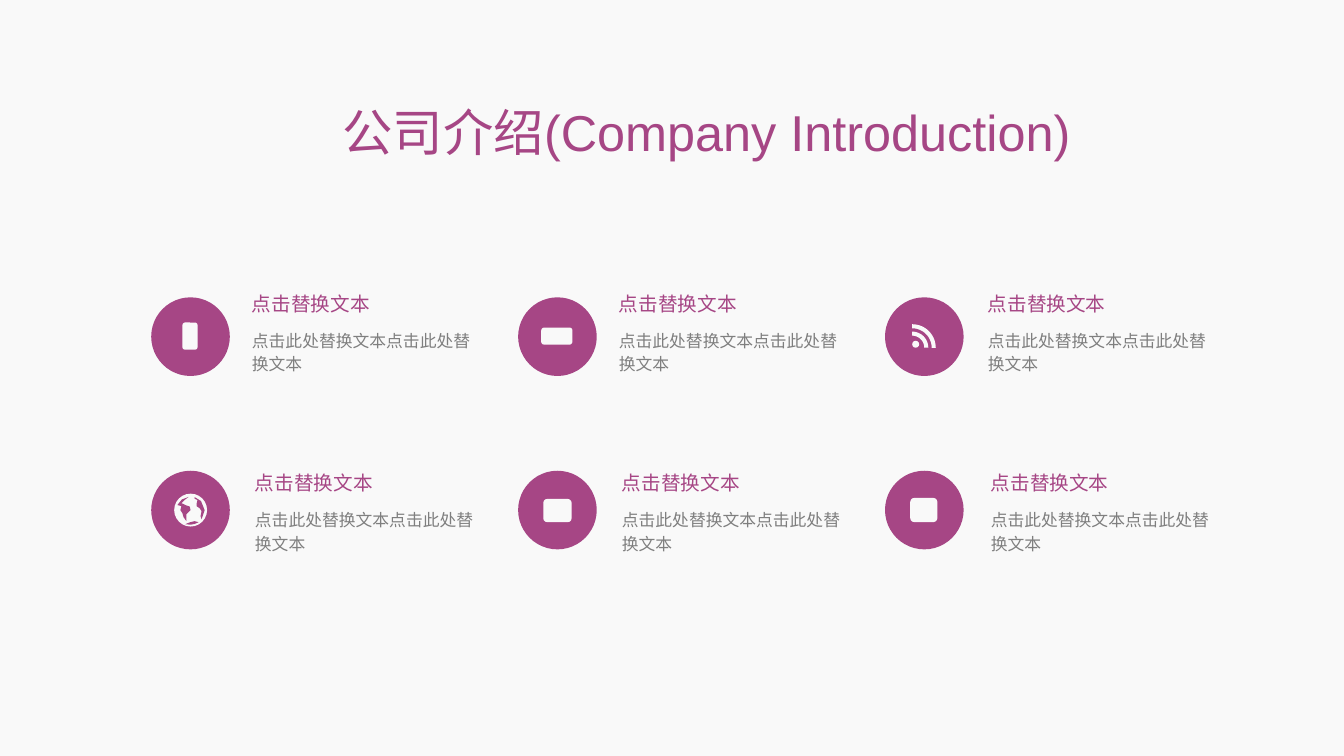
from math import cos, radians, sin

from pptx import Presentation
from pptx.dml.color import RGBColor
from pptx.enum.shapes import MSO_SHAPE
from pptx.enum.text import MSO_ANCHOR, PP_ALIGN
from pptx.util import Pt

PLUM = RGBColor(0xA6, 0x46, 0x85)
PALE = RGBColor(0xF9, 0xF9, 0xF9)
GREY = RGBColor(0x7F, 0x7F, 0x7F)
OVAL = MSO_SHAPE.OVAL
BLOCK = MSO_SHAPE.ROUNDED_RECTANGLE
MIDDLE = MSO_ANCHOR.MIDDLE
CENTER = PP_ALIGN.CENTER

deck = Presentation()
deck.slide_width, deck.slide_height = Pt(960), Pt(540)
slide = deck.slides.add_slide(deck.slide_layouts[6])
slide.background.fill.solid()
slide.background.fill.fore_color.rgb = PALE
shapes = slide.shapes


def paint(shape, color):
    shape.shadow.inherit = False
    shape.fill.solid()
    shape.fill.fore_color.rgb = color
    shape.line.fill.background()


def write(text, box, size, color, pitch, before=0, inset=(0, 0)):
    frame = shapes.add_textbox(*map(Pt, box)).text_frame
    frame.word_wrap = True
    frame.margin_left = frame.margin_right = Pt(inset[0])
    frame.margin_top = frame.margin_bottom = Pt(inset[1])
    line = frame.paragraphs[0]
    line.text = text
    line.line_spacing = pitch
    line.space_before = Pt(before)
    line.font.name = "Arial"
    line.font.size = Pt(size)
    line.font.color.rgb = color
    return frame


# Title
title = write("公司介绍(Company Introduction)", (144.72, 69.84, 720, 42.48),
              36, PLUM, Pt(48), inset=(7.2, 3.6))
title.vertical_anchor = MIDDLE
title.paragraphs[0].alignment = CENTER

# Six items: a disc, a heading and a body text each
DISC = 56.16
for row, (disc_top, text_top) in enumerate([(212.4, 210.24), (336.24, 338.4)]):
    for col, left in enumerate([180, 442.08, 705.6]):
        disc = shapes.add_shape(OVAL, Pt(108 + 262.08 * col), Pt(disc_top),
                                Pt(DISC), Pt(DISC))
        paint(disc, PLUM)
        left += 2.16 * row
        write("点击替换文本", (left, text_top, 192.24, 23.04),
              14, PLUM, 0.9, 10)
        write("点击此处替换文本点击此处替换文本",
              (left, text_top + 23.04, 167.76, 48.24), 12, GREY, Pt(17), 10)

# Plain icons, the dot of the feed and the ball of the globe
marks = [
    (BLOCK, 130.3, 230.4, 10.8, 19.4),
    (BLOCK, 386.6, 234, 22.3, 12.2),
    (BLOCK, 388.1, 356.4, 20.2, 16.6),
    (BLOCK, 650.2, 355.7, 19.4, 17.3),
    (OVAL, 651.6, 243.4, 5, 5),
    (OVAL, 124.4, 352.6, 23.5, 23.5),
]
for kind, *box in marks:
    paint(shapes.add_shape(kind, *map(Pt, box)), PALE)

# Land on the globe, measured from its centre
GLOBE = (136.1, 364.4)
lands = [
    [(-1.4, -9.4), (-4.3, -7.2), (-6.5, -5), (-5, -4.3), (-3.6, -3.6),
     (-0.5, -2.5), (0, 0), (-2.9, 2.9), (-2.9, 7.9), (-5, 5), (-5.8, 2.2),
     (-7.2, 0), (-6.5, -2.9), (-9.4, -3.6), (-6.2, -7.6)],
    [(10.1, 0), (7.9, 6.5), (7.2, 4.3), (7.9, 0.7), (6.5, -1.4),
     (4.3, -2.9), (4.5, -5.5), (5, -7.2), (2.9, -8.2), (2.9, -9.4),
     (7.5, -6.5)],
    [(-3.6, 10.1), (-2.2, 9.4), (0, 8.6), (2.9, 7.9), (5.8, 8.6),
     (3, 9.9), (0, 10.4)],
]
parts = [(GLOBE, PLUM, land) for land in lands]

# Waves of the feed, quarter rings around its lower left corner
FEED = (651.6, 248.4)
turns = [radians(angle) for angle in range(0, 91, 5)]
for inner, outer in [(8.6, 11.5), (13.9, 16.8)]:
    wave = [(outer * cos(turn), -outer * sin(turn)) for turn in turns]
    wave += [(inner * cos(turn), -inner * sin(turn)) for turn in turns[::-1]]
    parts.append((FEED, PALE, wave))

# Outlines are built in hundredths of a point
for (mid_x, mid_y), color, points in parts:
    spots = [(100 * (mid_x + x), 100 * (mid_y + y)) for x, y in points]
    pen = shapes.build_freeform(*spots[0], scale=Pt(1) / 100)
    pen.add_line_segments(spots[1:], close=True)
    paint(pen.convert_to_shape(), color)

deck.save("out.pptx")
